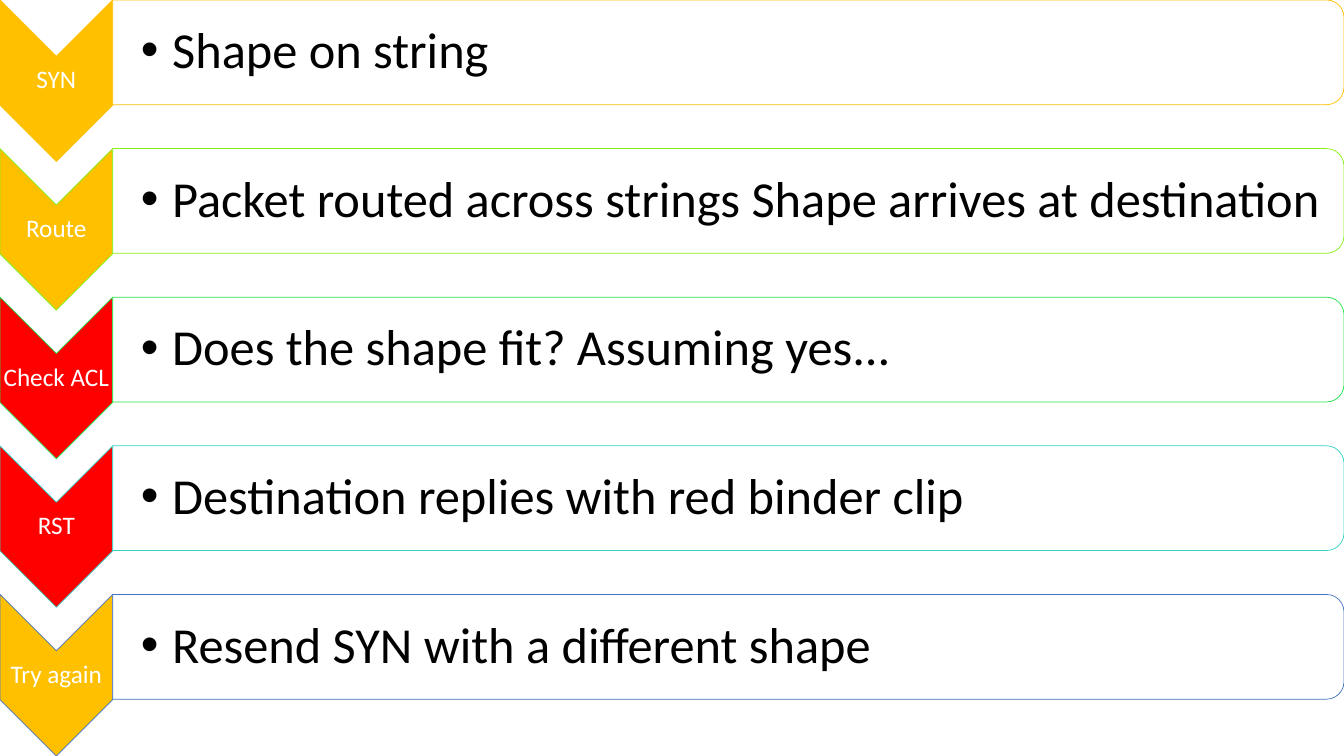
from lxml.etree import SubElement
from pptx import Presentation
from pptx.dml.color import RGBColor
from pptx.enum.shapes import MSO_SHAPE
from pptx.enum.text import MSO_ANCHOR, PP_ALIGN
from pptx.oxml.ns import qn
from pptx.util import Cm, Pt

COLORS = {
    "amber": "FFC000", "red": "FF0000", "lime": "86F011", "green": "23E148",
    "teal": "33D2C5", "blue": "4472C4", "white": "FFFFFF", "black": "000000",
}

# label, description, chevron fill, outline
STEPS = [
    ("SYN", "Shape on string", "amber", "amber"),
    ("Route", "Packet routed across strings Shape arrives at destination", "amber", "lime"),
    ("Check ACL", "Does the shape fit? Assuming yes...", "red", "green"),
    ("RST", "Destination replies with red binder clip", "red", "teal"),
    ("Try again", "Resend SYN with a different shape", "amber", "blue"),
]

SLIDE_WIDTH, SLIDE_HEIGHT = 33.87, 19.05
CHEVRON_WIDTH, CHEVRON_HEIGHT = 2.84, 4.07
NOTCH = CHEVRON_WIDTH / 2
PANEL_WIDTH, PANEL_HEIGHT = SLIDE_WIDTH - CHEVRON_WIDTH, 2.64
PANEL_MARGIN = 0.13
PITCH = (SLIDE_HEIGHT - CHEVRON_HEIGHT) / (len(STEPS) - 1)
BULLET_INDENT = 0.79


def color(name):
    return RGBColor.from_string(COLORS[name])


def add_turned_shape(page, kind, left, top, width, height, fill, line):
    """Add a shape turned by 90 degrees; the frame is the one seen after turning."""
    shape = page.shapes.add_shape(
        kind, Cm(left + (width - height) / 2), Cm(top + (height - width) / 2),
        Cm(height), Cm(width))
    shape.rotation = 90
    shape.shadow.inherit = False
    shape.fill.solid()
    shape.fill.fore_color.rgb = color(fill)
    shape.line.color.rgb = color(line)
    shape.line.width = Pt(0.5)


def add_text(page, text, frame, inset, left_inset, size, ink, bullet=False):
    box = page.shapes.add_textbox(*map(Cm, frame)).text_frame
    box.word_wrap = True
    box.vertical_anchor = MSO_ANCHOR.MIDDLE
    box.margin_top = box.margin_right = box.margin_bottom = Cm(inset)
    box.margin_left = Cm(left_inset)
    paragraph = box.paragraphs[0]
    paragraph.text = text
    paragraph.line_spacing = 0.9
    if bullet:
        paragraph.level = 1
        properties = paragraph._p.get_or_add_pPr()
        properties.set("marL", str(Cm(BULLET_INDENT)))
        properties.set("indent", str(-Cm(BULLET_INDENT)))
        SubElement(properties, qn("a:buFont"), typeface="Arial")
        SubElement(properties, qn("a:buChar"), char="•")
    else:
        paragraph.alignment = PP_ALIGN.CENTER
    paragraph.font.name = "Calibri"
    paragraph.font.size = Pt(size)
    paragraph.font.color.rgb = color(ink)


def add_step(page, top, label, description, fill, line):
    add_turned_shape(page, MSO_SHAPE.CHEVRON, 0, top,
                     CHEVRON_WIDTH, CHEVRON_HEIGHT, fill, line)
    add_text(page, label, (0, top + NOTCH, CHEVRON_WIDTH, CHEVRON_HEIGHT - 2 * NOTCH),
             0.03, 0.03, 18, "white")
    add_turned_shape(page, MSO_SHAPE.ROUND_2_SAME_RECTANGLE, CHEVRON_WIDTH, top,
                     PANEL_WIDTH, PANEL_HEIGHT, "white", line)
    add_text(page, description,
             (CHEVRON_WIDTH, top + PANEL_MARGIN,
              PANEL_WIDTH - PANEL_MARGIN, PANEL_HEIGHT - 2 * PANEL_MARGIN),
             0.06, 0.71, 36, "black", bullet=True)


def main():
    deck = Presentation()
    deck.slide_width, deck.slide_height = Cm(SLIDE_WIDTH), Cm(SLIDE_HEIGHT)
    page = deck.slides.add_slide(deck.slide_layouts[6])
    for index, step in enumerate(STEPS):
        add_step(page, index * PITCH, *step)
    deck.save("out.pptx")


if __name__ == "__main__":
    main()
